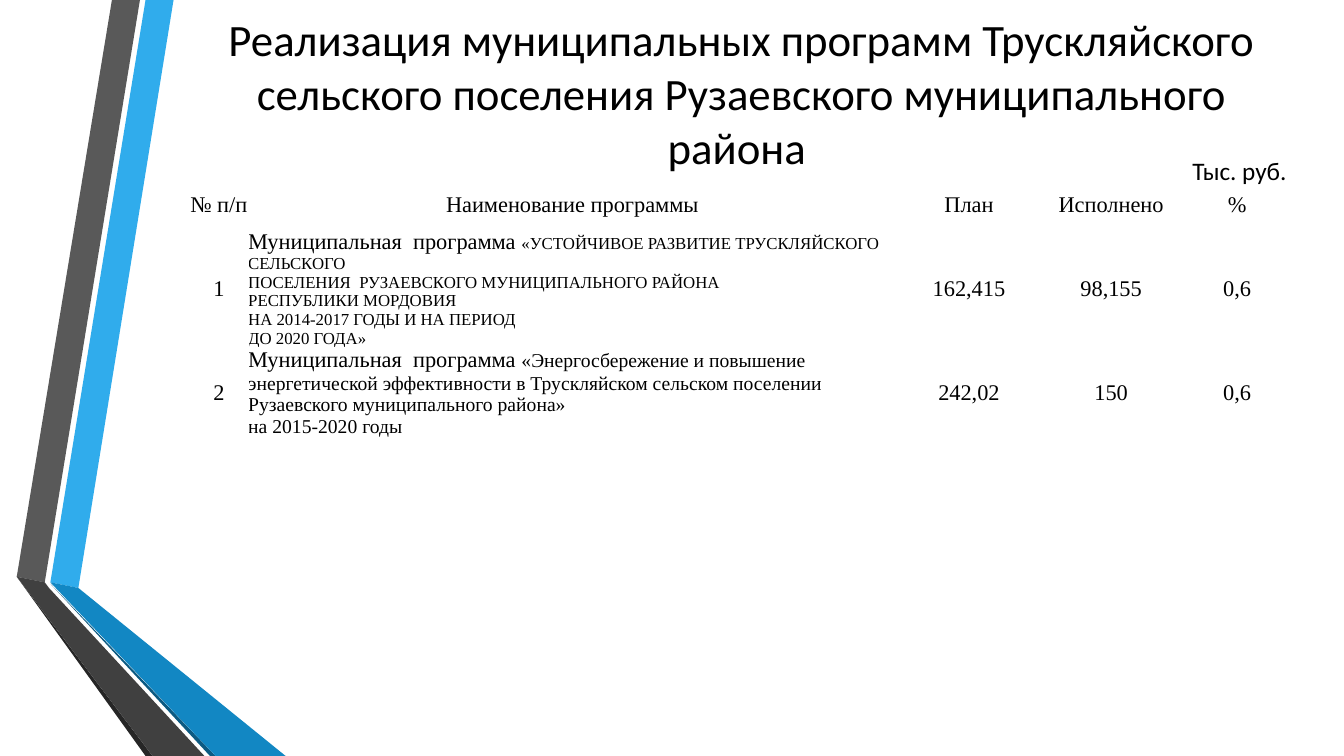
from pptx import Presentation
from pptx.dml.color import RGBColor
from pptx.enum import text
from pptx.util import Pt

COLORS = {
    "text": "000000", "paper": "FFFFFF",
    "sky": "30ACEC", "blue": "1287C3", "navy": "0C5A82",
    "grey": "595959", "charcoal": "404040", "soot": "262626",
}
SERIF, SANS = "Times New Roman", "Calibri"

# Ribbon outlines, back to front, in points
RIBBONS = [
    ("sky", [(36, 416), (55.5, 419.8), (124.5, 0), (104.5, 0)]),
    ("grey", [(100, 0), (80, 0), (11.5, 412.5), (31.5, 415.5)]),
    ("soot", [(11.5, 412.5), (104.5, 540), (108.7, 540)]),
    ("navy", [(36, 416.7), (150, 540), (154, 540)]),
    ("blue", [(36, 416), (154, 540), (204, 540), (55.5, 419.8)]),
    ("charcoal", [(145.5, 540), (34.6, 419.8), (31.5, 415.5),
                  (11.5, 412.5), (108.7, 540)]),
]

COLUMN_WIDTHS = [41.9, 463, 103.7, 99.4, 80.6]
ROW_HEIGHTS = [26.6, 84, 63]
HEADER = ["№ п/п", "Наименование программы", "План", "Исполнено", "%"]
PROGRAM = "Муниципальная  программа "
# Number, lines of the program's name, size of the name, figures
PROGRAMS = [
    ("1", ["«УСТОЙЧИВОЕ РАЗВИТИЕ ТРУСКЛЯЙСКОГО СЕЛЬСКОГО",
           "ПОСЕЛЕНИЯ  РУЗАЕВСКОГО МУНИЦИПАЛЬНОГО РАЙОНА",
           "РЕСПУБЛИКИ МОРДОВИЯ",
           "НА 2014-2017 ГОДЫ И НА ПЕРИОД",
           "ДО 2020 ГОДА»"], 12, ["162,415", "98,155", "0,6"]),
    ("2", ["«Энергосбережение и повышение энергетической эффективности "
           "в Трускляйском сельском поселении Рузаевского "
           "муниципального района»",
           "на 2015-2020 годы"], 14, ["242,02", "150", "0,6"]),
]


def rgb(name):
    return RGBColor.from_string(COLORS[name])


def style(font, name, size):
    font.name, font.size = name, Pt(size)
    font.color.rgb = rgb("text")


def add_ribbon(s, color, points):
    builder = s.shapes.build_freeform(*points[0], scale=Pt(1))
    builder.add_line_segments(points[1:], close=True)
    sp = builder.convert_to_shape()
    sp.fill.solid()
    sp.fill.fore_color.rgb = rgb(color)
    sp.line.fill.background()
    sp.shadow.inherit = False


def set_title(s, title):
    sp = s.shapes.title
    sp.left, sp.top, sp.width, sp.height = Pt(135.4), Pt(18.7), Pt(789), Pt(95)
    tf = sp.text_frame
    tf.text = title
    tf.vertical_anchor = text.MSO_ANCHOR.MIDDLE
    p = tf.paragraphs[0]
    p.alignment = text.PP_ALIGN.CENTER
    style(p.font, SANS, 32)


def add_unit_label(s, label):
    sp = s.shapes.add_textbox(Pt(844.6), Pt(107.3), Pt(84.2), Pt(28.8))
    sp.text_frame.word_wrap = False
    p = sp.text_frame.paragraphs[0]
    p.text = label
    style(p.font, SANS, 18)


def fill_cell(cell, value, anchor):
    cell.vertical_anchor = anchor
    p = cell.text_frame.paragraphs[0]
    p.text = value
    p.alignment = text.PP_ALIGN.CENTER
    style(p.font, SERIF, 16)


def fill_program_cell(cell, lines, size):
    cell.vertical_anchor = text.MSO_ANCHOR.MIDDLE
    tf = cell.text_frame
    for i, line in enumerate(lines):
        p = tf.add_paragraph() if i else tf.paragraphs[0]
        runs = [(line, size)] if i else [(PROGRAM, 16), (line, size)]
        for value, run_size in runs:
            r = p.add_run()
            r.text = value
            style(r.font, SERIF, run_size)


def add_program_table(s):
    frame = s.shapes.add_table(
        len(ROW_HEIGHTS), len(COLUMN_WIDTHS), Pt(135.4), Pt(137.5),
        Pt(sum(COLUMN_WIDTHS)), Pt(sum(ROW_HEIGHTS)))
    table = frame.table
    table.first_row = table.horz_banding = False
    for column, width in zip(table.columns, COLUMN_WIDTHS):
        column.width = Pt(width)
    for row, height in zip(table.rows, ROW_HEIGHTS):
        row.height = Pt(height)
    for cell in table.iter_cells():
        cell.margin_left = cell.margin_right = 0
        cell.margin_top = cell.margin_bottom = 0
        cell.fill.solid()
        cell.fill.fore_color.rgb = rgb("paper")

    for column, heading in enumerate(HEADER):
        fill_cell(table.cell(0, column), heading, text.MSO_ANCHOR.TOP)
    for row, (number, lines, size, figures) in enumerate(PROGRAMS, 1):
        fill_cell(table.cell(row, 0), number, text.MSO_ANCHOR.MIDDLE)
        fill_program_cell(table.cell(row, 1), lines, size)
        for column, figure in enumerate(figures, 2):
            fill_cell(table.cell(row, column), figure, text.MSO_ANCHOR.MIDDLE)


def main():
    prs = Presentation()
    prs.slide_width, prs.slide_height = Pt(960), Pt(540)
    s = prs.slides.add_slide(prs.slide_layouts[5])

    # Side decoration
    for color, points in RIBBONS:
        add_ribbon(s, color, points)

    # Title, table and unit of measure
    set_title(s, "Реализация муниципальных программ Трускляйского сельского "
                 "поселения Рузаевского муниципального района ")
    add_program_table(s)
    add_unit_label(s, "Тыс. руб.")

    prs.save("out.pptx")


if __name__ == "__main__":
    main()
